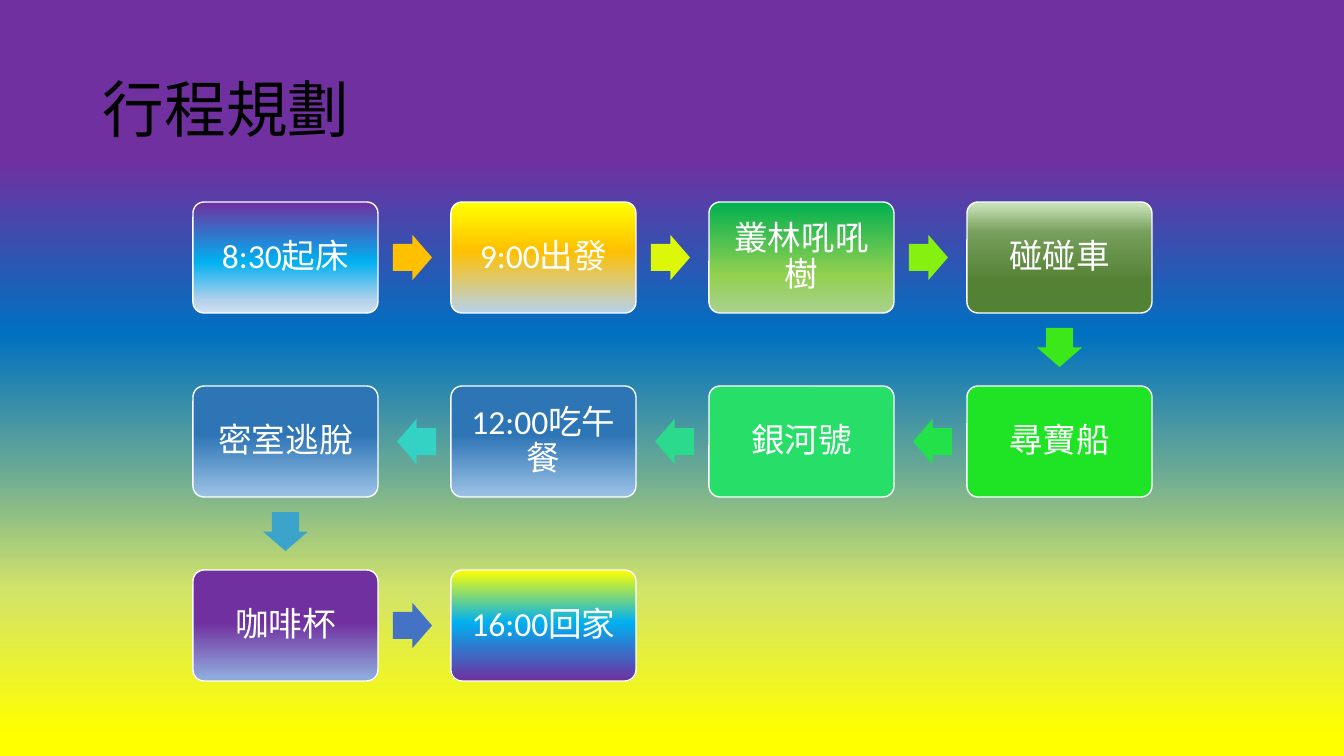
from lxml.etree import SubElement
from pptx import Presentation
from pptx.dml.color import RGBColor
from pptx.enum.shapes import MSO_SHAPE
from pptx.enum.text import MSO_ANCHOR, PP_ALIGN
from pptx.oxml.ns import qn
from pptx.util import Emu, Pt

# Colours
WHITE = RGBColor(0xFF, 0xFF, 0xFF)
BLACK = RGBColor(0x00, 0x00, 0x00)
PURPLE = RGBColor(0x70, 0x30, 0xA0)
BLUE = RGBColor(0x00, 0x70, 0xC0)
SKY = RGBColor(0x00, 0xB0, 0xF0)
STEEL = RGBColor(0x2E, 0x75, 0xB6)
LIGHT_STEEL = RGBColor(0x9D, 0xC3, 0xE6)
PERIWINKLE = RGBColor(0x8F, 0xAA, 0xDC)
ROYAL = RGBColor(0x44, 0x72, 0xC4)
PALE_BLUE = RGBColor(0xB5, 0xD2, 0xEC)
PALEST_BLUE = RGBColor(0xCE, 0xE1, 0xF2)
YELLOW = RGBColor(0xFF, 0xFF, 0x00)
GOLD = RGBColor(0xFF, 0xC0, 0x00)
OLIVE = RGBColor(0xD2, 0xE3, 0x6A)
SEA = RGBColor(0x63, 0xA6, 0x97)
GREEN = RGBColor(0x00, 0xB0, 0x50)
LIME = RGBColor(0x92, 0xD0, 0x50)
SAGE = RGBColor(0xA9, 0xD1, 0x8E)
PALE_MOSS = RGBColor(0xC5, 0xE0, 0xB4)
MID_MOSS = RGBColor(0x77, 0x9F, 0x5D)
MOSS = RGBColor(0x54, 0x82, 0x35)
VIVID_GREEN = RGBColor(0x1F, 0xE4, 0x26)
MINT = RGBColor(0x26, 0xDE, 0x68)

# Content: each stop has a label and its (percent, colour) gradient from top to bottom
TITLE = "行程規劃"
BACKDROP = [(21, PURPLE), (44, BLUE), (61, SEA), (78, OLIVE), (97, YELLOW)]
STEEL_FADE = [(44, STEEL), (100, LIGHT_STEEL)]
STOPS = [
    ("8:30起床", [(0, PURPLE), (54, SKY), (89, PALE_BLUE), (100, PALEST_BLUE)]),
    ("9:00出發", [(0, YELLOW), (44, GOLD), (100, PALE_BLUE)]),
    ("叢林吼吼樹", [(0, GREEN), (66, LIME), (100, SAGE)]),
    ("碰碰車", [(3, PALE_MOSS), (27, MID_MOSS), (71, MOSS)]),
    ("尋寶船", [(0, VIVID_GREEN)]),
    ("銀河號", [(0, MINT)]),
    ("12:00吃午餐", STEEL_FADE),
    ("密室逃脫", STEEL_FADE),
    ("咖啡杯", [(47, PURPLE), (97, PERIWINKLE)]),
    ("16:00回家", [(0, YELLOW), (47, SKY), (100, PURPLE)]),
]
ARROW_COLOURS = [
    GOLD, RGBColor(0xDC, 0xF7, 0x09), RGBColor(0x86, 0xF0, 0x11),
    RGBColor(0x3C, 0xE8, 0x1A), RGBColor(0x23, 0xE1, 0x48),
    RGBColor(0x2B, 0xDA, 0x8C), RGBColor(0x33, 0xD2, 0xC5),
    RGBColor(0x3C, 0xA3, 0xCB), ROYAL,
]

# Layout in px
SLIDE_W, SLIDE_H = 1344, 756
COLUMNS = 4
LEFT, TOP = 193, 202
STEP_X, STEP_Y = 258, 184
CARD_W, CARD_H = 185, 111
ARROW_W, ARROW_H = 39, 45
CARD_INSET = 10
PULL_BACK = 2  # arrows sit slightly nearer the stop they leave


def px(length):
    return Emu(round(length * 914400 / 100.8))


def paint(fill, owner, colours):
    if len(colours) == 1:
        fill.solid()
        fill.fore_color.rgb = colours[0][1]
        return
    fill.gradient()
    fill.gradient_angle = 270
    stop_list = owner.xpath(".//a:gsLst")[0]
    stop_list.clear()
    for percent, colour in colours:
        stop = SubElement(stop_list, qn("a:gs"), pos=str(percent * 1000))
        SubElement(stop, qn("a:srgbClr"), val=str(colour))


def write(shape, words, size, colour, align):
    frame = shape.text_frame
    frame.text = words
    frame.word_wrap = True
    frame.vertical_anchor = MSO_ANCHOR.MIDDLE
    paragraph = frame.paragraphs[0]
    paragraph.alignment = align
    paragraph.line_spacing = 0.9
    paragraph.font.size = Pt(size)
    paragraph.font.name = "Calibri"
    paragraph.font.color.rgb = colour


def card_centre(index):
    """The route runs back and forth, turning at each end of a row."""
    row, column = divmod(index, COLUMNS)
    if row % 2:
        column = COLUMNS - 1 - column
    return LEFT + column * STEP_X + CARD_W / 2, TOP + row * STEP_Y + CARD_H / 2


def add_centred(kind, x, y, width, height):
    shape = slide.shapes.add_shape(
        kind, px(x - width / 2), px(y - height / 2), px(width), px(height))
    shape.shadow.inherit = False
    return shape


prs = Presentation()
prs.slide_width, prs.slide_height = px(SLIDE_W), px(SLIDE_H)
slide = prs.slides.add_slide(prs.slide_layouts[6])

# Background and title
paint(slide.background.fill, slide.element, BACKDROP)
heading = slide.shapes.add_textbox(px(93), px(40), px(1159), px(146))
write(heading, TITLE, 44, BLACK, PP_ALIGN.LEFT)

# Stops
for index, (label, colours) in enumerate(STOPS):
    card = add_centred(MSO_SHAPE.ROUNDED_RECTANGLE, *card_centre(index), CARD_W, CARD_H)
    card.adjustments[0] = 0.1
    paint(card.fill, card.element, colours)
    card.line.color.rgb = WHITE
    card.line.width = Pt(1)
    write(card, label, 24, WHITE, PP_ALIGN.CENTER)
    frame = card.text_frame
    frame.margin_left = frame.margin_right = px(CARD_INSET)
    frame.margin_top = frame.margin_bottom = px(CARD_INSET)

# Arrows from each stop to the next
for index, colour in enumerate(ARROW_COLOURS):
    (x1, y1), (x2, y2) = card_centre(index), card_centre(index + 1)
    along_x = (x2 > x1) - (x2 < x1)
    along_y = (y2 > y1) - (y2 < y1)
    arrow = add_centred(
        MSO_SHAPE.RIGHT_ARROW,
        (x1 + x2) / 2 - PULL_BACK * along_x,
        (y1 + y2) / 2 - PULL_BACK * along_y,
        ARROW_W, ARROW_H)
    arrow.rotation = 90 if along_y else 180 if along_x < 0 else 0
    arrow.adjustments[0] = 0.6
    arrow.adjustments[1] = 0.5
    paint(arrow.fill, arrow.element, [(0, colour)])
    arrow.line.fill.background()

prs.save("out.pptx")
